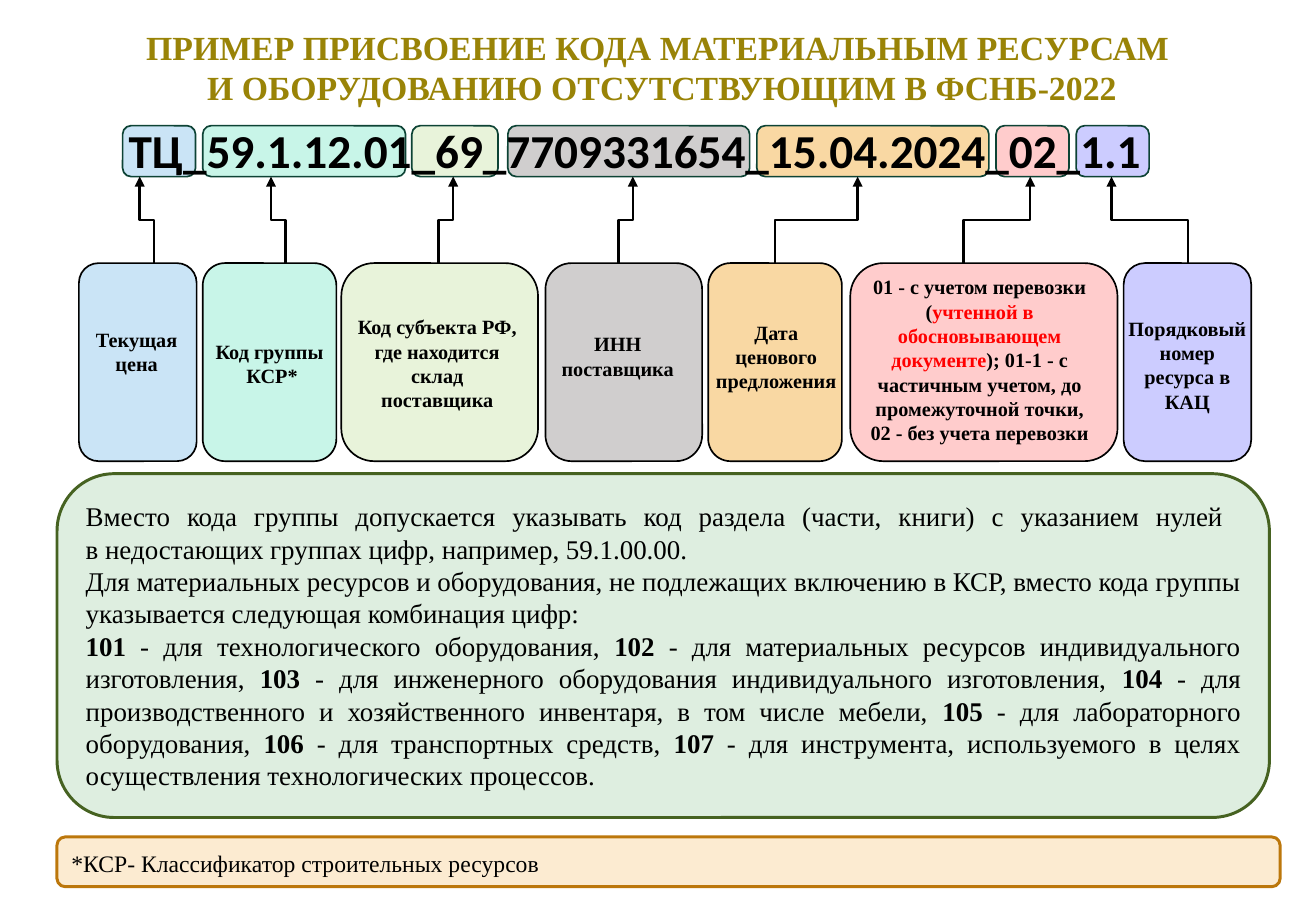
from collections import namedtuple

from lxml import etree
from pptx import Presentation
from pptx.dml.color import RGBColor
from pptx.enum import shapes, text
from pptx.oxml.ns import qn
from pptx.util import Pt

BLACK = RGBColor(0x00, 0x00, 0x00)
RED = RGBColor(0xFF, 0x00, 0x00)
GOLD = RGBColor(0x99, 0x83, 0x07)
CHIP_LINE = RGBColor(0x0D, 0x43, 0x35)
BLUE = RGBColor(0xCA, 0xE4, 0xF6)
MINT = RGBColor(0xC8, 0xF5, 0xE8)
LIME = RGBColor(0xE8, 0xF3, 0xDA)
GREY = RGBColor(0xD0, 0xCE, 0xCE)
SAND = RGBColor(0xF9, 0xD8, 0xA3)
PINK = RGBColor(0xFF, 0xCC, 0xCC)
LILAC = RGBColor(0xCC, 0xCC, 0xFF)
PANEL_FILL = RGBColor(0xDE, 0xEE, 0xE0)
PANEL_LINE = RGBColor(0x46, 0x62, 0x21)
NOTE_FILL = RGBColor(0xFC, 0xEB, 0xD1)
NOTE_LINE = RGBColor(0xBC, 0x77, 0x0B)

SERIF = "Times New Roman"
CENTER, LEFT, JUSTIFY = text.PP_ALIGN.CENTER, text.PP_ALIGN.LEFT, text.PP_ALIGN.JUSTIFY

# Horizontal places (left, width) of each code part, its box and its label;
# arrow is (start x, end x), label_top is measured from the top of the box.
Part = namedtuple("Part", "color chip box arrow label label_top words")
PARTS = [
    Part(BLUE, (72.7, 43.2), (46.8, 69.8), (91.4, 82.8), (46.8, 68.4), 34.3,
         ["Текущая цена"]),
    Part(MINT, (120.2, 120.2), (120.2, 79.2), (169.2, 160.6), (120.2, 79.2), 41.5,
         ["Код группы", " КСР*"]),
    Part(LIME, (244.1, 51.1), (202.3, 116.6), (259.9, 268.6), (204.5, 109.4), 27,
         ["Код субъекта РФ, где находится склад поставщика"]),
    Part(GREY, (301, 143.3), (323.3, 92.9), (366.5, 375.1), (319.7, 92.9), 37,
         ["ИНН поставщика"]),
    Part(SAND, (448.6, 137.5), (419.8, 79.2), (459.4, 508.3), (416.2, 87.8), 30,
         ["Дата ценового предложения"]),
    Part(PINK, (590.4, 43.2), (504, 158.4), (571, 610.6), (508.3, 144.7), 3.3,
         ["01 - с учетом перевозки (|учтенной в обосновывающем документе|); 01-1 - "
          "с частичным учетом, до промежуточной точки, 02 - без учета перевозки"]),
    Part(LILAC, (637.9, 43.2), (666, 75.6), (704.2, 658.8), (661.7, 84.2), 27.8,
         ["Порядковый номер ресурса в КАЦ"]),
]

RULES = [
    "Вместо кода группы допускается указывать код раздела (части, книги) с указанием "
    "нулей \nв недостающих группах цифр, например, 59.1.00.00. ",
    "Для материальных ресурсов и оборудования, не подлежащих включению в КСР, вместо "
    "кода группы указывается следующая комбинация цифр: ",
    "|101| - для технологического оборудования, |102| - для материальных ресурсов "
    "индивидуального изготовления, |103| - для инженерного оборудования индивидуального "
    "изготовления, |104| - для производственного и хозяйственного инвентаря, в том числе "
    "мебели, |105| - для лабораторного оборудования, |106| - для транспортных средств, "
    "|107| - для инструмента, используемого в целях осуществления технологических "
    "процессов. ",
]


def write(tf, paragraphs, size, font=SERIF, color=BLACK, bold=False, align=CENTER,
          accent_color=None, accent_bold=None, spacing=None,
          anchor=text.MSO_ANCHOR.TOP):
    """Fill a text frame; the pieces between bars take the accent format."""
    tf.word_wrap = True
    tf.auto_size = text.MSO_AUTO_SIZE.NONE
    tf.vertical_anchor = anchor
    for i, paragraph in enumerate(paragraphs):
        p = tf.add_paragraph() if i else tf.paragraphs[0]
        p.alignment = align
        if spacing:
            p.line_spacing = spacing
        for j, piece in enumerate(paragraph.split("|")):
            accent = j % 2 == 1
            for k, line in enumerate(piece.split("\n")):
                if k:
                    p.add_line_break()
                if not line:
                    continue
                r = p.add_run()
                r.text = line
                r.font.name = font
                r.font.size = Pt(size)
                r.font.bold = accent_bold if accent and accent_bold else bold
                r.font.color.rgb = accent_color if accent and accent_color else color


def round_box(s, left, top, width, height, fill, line, weight=1):
    sp = s.shapes.add_shape(shapes.MSO_SHAPE.ROUNDED_RECTANGLE,
                            Pt(left), Pt(top), Pt(width), Pt(height))
    sp.shadow.inherit = False
    sp.fill.solid()
    sp.fill.fore_color.rgb = fill
    sp.line.color.rgb = line
    sp.line.width = Pt(weight)
    return sp


def text_box(s, left, top, width, height, paragraphs, **fmt):
    sp = s.shapes.add_textbox(Pt(left), Pt(top), Pt(width), Pt(height))
    write(sp.text_frame, paragraphs, **fmt)


def rising_arrow(s, x1, y1, x2, y2):
    """Elbow arrow that leaves and arrives vertically: a level elbow turned by 270°."""
    cx, cy = (x1 + x2) / 2, (y1 + y2) / 2
    rise, run = (y1 - y2) / 2, (x2 - x1) / 2
    c = s.shapes.add_connector(shapes.MSO_CONNECTOR.ELBOW, Pt(cx - rise), Pt(cy - run),
                               Pt(cx + rise), Pt(cy + run))
    c.line.color.rgb = BLACK
    c.line.width = Pt(1.5)
    spPr = c._element.spPr
    spPr.find(qn("a:xfrm")).set("rot", str(270 * 60000))
    etree.SubElement(spPr.find(qn("a:ln")), qn("a:tailEnd"), type="triangle")
    etree.SubElement(spPr, qn("a:effectLst"))


def heading(s, left, top, width, height):
    sp = s.shapes.title
    sp.left, sp.top, sp.width, sp.height = Pt(left), Pt(top), Pt(width), Pt(height)
    write(sp.text_frame, ["ПРИМЕР ПРИСВОЕНИЕ КОДА МАТЕРИАЛЬНЫМ РЕСУРСАМ ",
                          "И ОБОРУДОВАНИЮ ОТСУТСТВУЮЩИМ В ФСНБ-2022"],
          size=20, color=GOLD, bold=True)


def code_row(s, left, top, width, height):
    for part in PARTS:
        x, w = part.chip
        round_box(s, left + x, top, w, height, part.color, CHIP_LINE)
    text_box(s, left, top - 6, width, 63,
             ["ТЦ_59.1.12.01_69_7709331654_15.04.2024_02_1.1"],
             size=28, font="Calibri", bold=True)


def explanations(s, left, top, height, code_bottom):
    for part in PARTS:
        x, w = part.box
        round_box(s, left + x, top, w, height, part.color, BLACK)
        start, end = part.arrow
        rising_arrow(s, left + start, top, left + end, code_bottom)
        x, w = part.label
        text_box(s, left + x, top + part.label_top, w, height - part.label_top,
                 part.words, size=12, bold=True, accent_color=RED)


def rules_panel(s, left, top, width, height):
    sp = round_box(s, left, top, width, height, PANEL_FILL, PANEL_LINE, 1.75)
    write(sp.text_frame, RULES, size=16, align=JUSTIFY, accent_bold=True,
          anchor=text.MSO_ANCHOR.MIDDLE)


def footnote(s, left, top, width, height):
    sp = round_box(s, left, top, width, height, NOTE_FILL, NOTE_LINE, 1.75)
    write(sp.text_frame, ["*КСР- Классификатор строительных ресурсов"], size=14,
          align=LEFT, spacing=Pt(18), anchor=text.MSO_ANCHOR.MIDDLE)


def main():
    prs = Presentation()
    prs.slide_width, prs.slide_height = Pt(780), Pt(540)
    s = prs.slides.add_slide(prs.slide_layouts[5])
    heading(s, 3.6, 12.2, 777.6, 55.4)
    code_row(s, 0, 74.5, 752.4, 30.2)
    explanations(s, 0, 156, 117.4, 104.7)
    rules_panel(s, 33.8, 280.8, 718.6, 203.8)
    footnote(s, 33.8, 496.1, 725, 29.5)
    prs.save("out.pptx")


if __name__ == "__main__":
    main()
